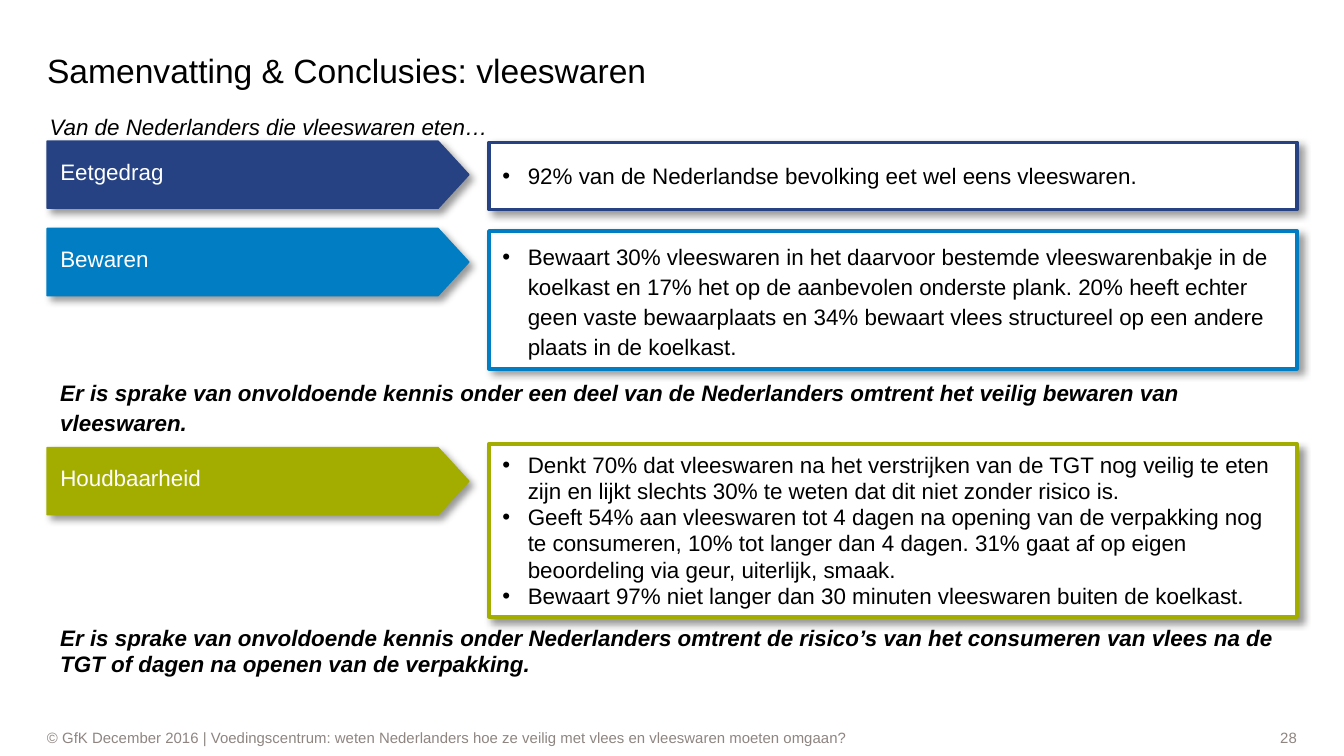
from lxml.etree import SubElement
from pptx import Presentation
from pptx.dml.color import RGBColor
from pptx.enum.shapes import MSO_SHAPE as SHAPE
from pptx.enum.text import MSO_ANCHOR as ANCHOR, MSO_AUTO_SIZE as AUTO, PP_ALIGN as ALIGN
from pptx.oxml.ns import qn
from pptx.util import Pt

NAVY, BLUE, GREEN = "264283", "007DC3", "A2AD00"
BLACK, WHITE, GRAY = "000000", "FFFFFF", "8E8581"
LEFT, WIDTH = 25.2, 669.6
ARROW_W, ARROW_H, TIP = 226, 36, 16.5
INSETS = (7.2, 3.6, 7.2, 3.6)
FLUSH = (0, 0, 0, 0)


def rgb(value):
    return RGBColor.from_string(value)


def fill_text(sp, lines, size=12, color=BLACK, bold=False, italic=False,
              insets=INSETS, anchor=ANCHOR.MIDDLE, align=ALIGN.LEFT,
              spacing=None, bullets=False):
    tf = sp.text_frame
    tf.text = "\n".join(lines)
    tf.word_wrap = True
    tf.auto_size = AUTO.NONE
    tf.vertical_anchor = anchor
    tf.margin_left, tf.margin_top, tf.margin_right, tf.margin_bottom = map(Pt, insets)
    for p in tf.paragraphs:
        p.alignment = align
        if spacing:
            p.line_spacing = Pt(spacing)
        if bullets:
            add_bullet(p)
        for r in p.runs:
            r.font.name = "Arial"
            r.font.size = Pt(size)
            r.font.bold = bold
            r.font.italic = italic
            r.font.color.rgb = rgb(color)


def add_bullet(p):
    pPr = p._p.get_or_add_pPr()
    pPr.set("marL", str(Pt(13.7)))
    pPr.set("indent", str(-Pt(13.7)))
    SubElement(pPr, qn("a:buFont"), typeface="Arial")
    SubElement(pPr, qn("a:buChar"), char="•")


def style_shape(sp, fill, line, width):
    sp.fill.solid()
    sp.fill.fore_color.rgb = rgb(fill)
    sp.line.color.rgb = rgb(line)
    sp.line.width = Pt(width)
    # Soft shadow to the lower right
    sp.shadow.inherit = False
    effects = sp._element.spPr.find(qn("a:effectLst"))
    shadow = SubElement(effects, qn("a:outerShdw"), blurRad=str(Pt(4)), dist=str(Pt(3)),
                        dir="2700000", algn="tl", rotWithShape="0")
    color = SubElement(shadow, qn("a:srgbClr"), val=BLACK)
    SubElement(color, qn("a:alpha"), val="40000")


def add_text(slide, box, lines, **style):
    sp = slide.shapes.add_textbox(*map(Pt, box))
    fill_text(sp, lines, **style)
    return sp


def add_title(slide, box, text):
    sp = slide.shapes.title
    sp.left, sp.top, sp.width, sp.height = map(Pt, box)
    fill_text(sp, [text], size=18, insets=FLUSH)


def add_arrow(slide, box, label, color):
    x, y, w, h = box
    builder = slide.shapes.build_freeform(Pt(x), Pt(y))
    corners = [(x + w - TIP, y), (x + w, y + h / 2), (x + w - TIP, y + h), (x, y + h)]
    builder.add_line_segments([(Pt(a), Pt(b)) for a, b in corners], close=True)
    sp = builder.convert_to_shape()
    style_shape(sp, color, color, 0.75)
    fill_text(sp, [label], color=WHITE, insets=(7.2, 3.6, 7.2, 8.6), spacing=16)


def add_card(slide, box, lines, color, spacing):
    sp = slide.shapes.add_shape(SHAPE.RECTANGLE, *map(Pt, box))
    style_shape(sp, WHITE, color, 2)
    fill_text(sp, lines, spacing=spacing, bullets=True)


def add_topic(slide, box, label, lines, color, arrow_top, spacing):
    """Arrow label on the left, outlined card filling the rest of the box."""
    x, y, w, h = box
    card_x = 262
    add_card(slide, (card_x, y, x + w - card_x, h), lines, color, spacing)
    add_arrow(slide, (x, arrow_top, ARROW_W, ARROW_H), label, color)


def add_conclusion(slide, box, text, spacing):
    add_text(slide, box, [text], bold=True, italic=True, anchor=ANCHOR.TOP, spacing=spacing)


def add_footer(slide, box, text, number):
    x, y, w, h = box
    number_w = 102
    add_text(slide, (x, y, w - number_w - 12, h), [text], size=8, color=GRAY, insets=FLUSH)
    add_text(slide, (x + w - number_w, y, number_w, h), [number], size=8, color=GRAY,
             insets=FLUSH, align=ALIGN.RIGHT)


def main():
    prs = Presentation()
    prs.slide_width, prs.slide_height = Pt(720), Pt(405)
    slide = prs.slides.add_slide(prs.slide_layouts[5])

    # Heading
    add_title(slide, (LEFT, 15, 505, 45.5), "Samenvatting & Conclusies: vleeswaren")
    add_text(slide, (26.6, 60.5, 266, 14.4), ["Van de Nederlanders die vleeswaren eten…"],
             italic=True, insets=FLUSH)

    # Topics: label, card top and height, colour, arrow top, line spacing, points
    topics = [
        ("Eetgedrag", 76.3, 36, NAVY, 75.6, 14,
         ["92% van de Nederlandse bevolking eet wel eens vleeswaren."]),
        ("Bewaren", 123.8, 73.8, BLUE, 122.4, 16,
         ["Bewaart 30% vleeswaren in het daarvoor bestemde vleeswarenbakje in de koelkast "
          "en 17% het op de aanbevolen onderste plank. 20% heeft echter geen vaste "
          "bewaarplaats en 34% bewaart vlees structureel op een andere plaats in de koelkast."]),
        ("Houdbaarheid", 237.8, 92.7, GREEN, 239.8, 14,
         ["Denkt 70% dat vleeswaren na het verstrijken van de TGT nog veilig te eten zijn "
          "en lijkt slechts 30% te weten dat dit niet zonder risico is.",
          "Geeft 54% aan vleeswaren tot 4 dagen na opening van de verpakking nog te "
          "consumeren, 10% tot langer dan 4 dagen. 31% gaat af op eigen beoordeling via "
          "geur, uiterlijk, smaak.",
          "Bewaart 97% niet langer dan 30 minuten vleeswaren buiten de koelkast."]),
    ]
    for label, top, height, color, arrow_top, spacing, lines in topics:
        add_topic(slide, (LEFT, top, WIDTH, height), label, lines, color, arrow_top, spacing)

    # Conclusions
    add_conclusion(slide, (LEFT, 198, WIDTH, 39.5),
                   "Er is sprake van onvoldoende kennis onder een deel van de Nederlanders "
                   "omtrent het veilig bewaren van vleeswaren.", 16)
    add_conclusion(slide, (LEFT, 331.2, WIDTH, 36),
                   "Er is sprake van onvoldoende kennis onder Nederlanders omtrent de risico’s "
                   "van het consumeren van vlees na de TGT of dagen na openen van de "
                   "verpakking.", 14)

    # Footer
    add_footer(slide, (LEFT, 389.5, WIDTH, 11.5),
               "© GfK December 2016 | Voedingscentrum: weten Nederlanders hoe ze veilig met "
               "vlees en vleeswaren moeten omgaan?", "28")

    prs.save("out.pptx")


if __name__ == "__main__":
    main()
